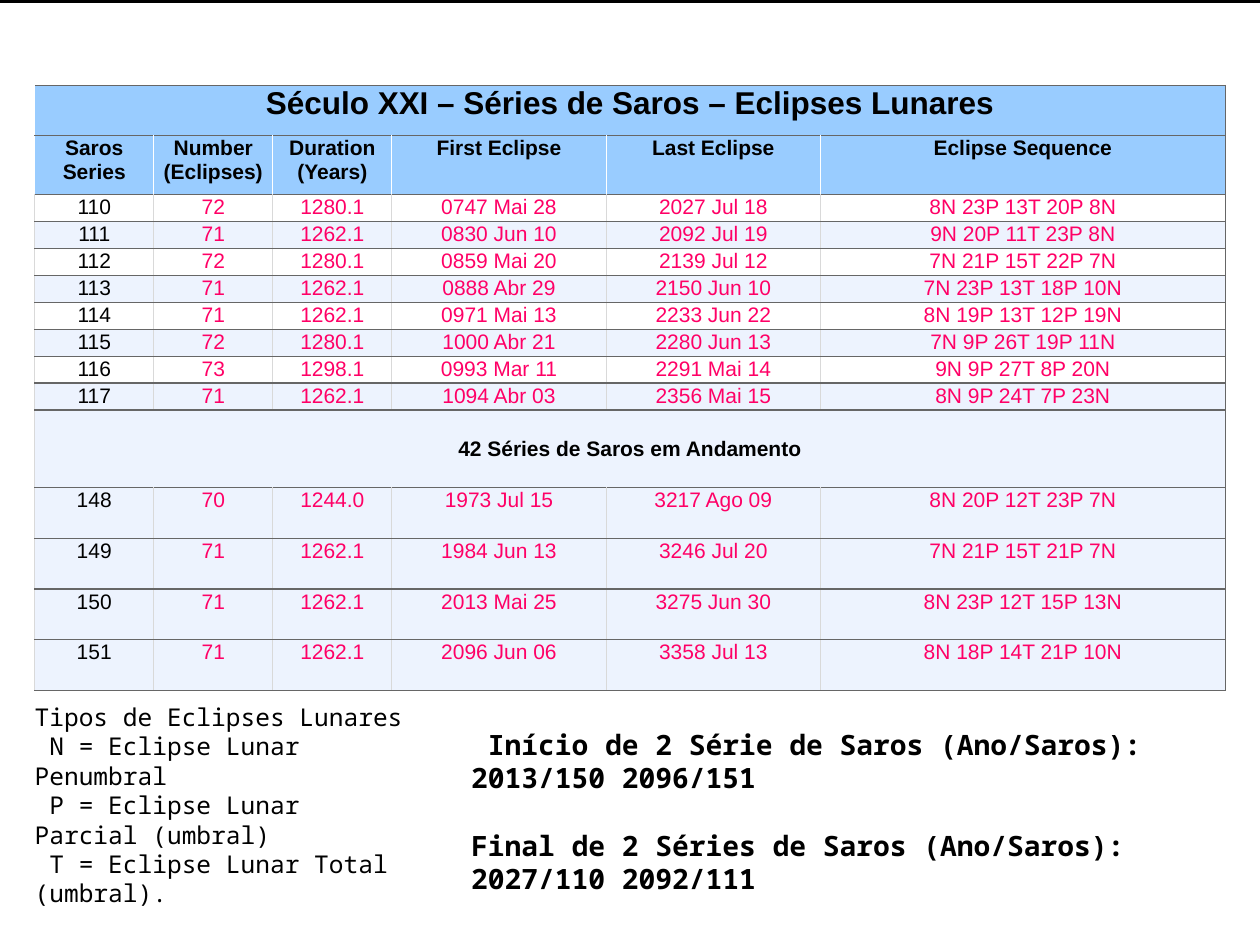
import dataclasses

import lxml.etree
import pptx
import pptx.dml.color
import pptx.enum.shapes
import pptx.enum.text
import pptx.oxml.ns
import pptx.util

Cm = pptx.util.Cm
Pt = pptx.util.Pt


@dataclasses.dataclass(frozen=True)
class Theme:
    table_font: str = "Arial"
    note_font: str = "Noto Sans Mono"
    title_size: float = 18
    table_size: float = 12
    legend_size: float = 14
    summary_size: float = 16
    black: str = "000000"
    white: str = "FFFFFF"
    header_fill: str = "99CCFF"
    band_fill: str = "EDF3FE"
    value: str = "FF0066"
    rule: str = "666666"
    divider: str = "D9D9D9"
    border_width: float = 0.75


TITLE = "Século XXI – Séries de Saros – Eclipses Lunares"
HEADERS = ["Saros Series", "Number (Eclipses)", "Duration (Years)",
           "First Eclipse", "Last Eclipse", "Eclipse Sequence"]
ENDING_SERIES = [
    ["110", "72", "1280.1", "0747 Mai 28", "2027 Jul 18", "8N 23P 13T 20P 8N"],
    ["111", "71", "1262.1", "0830 Jun 10", "2092 Jul 19", "9N 20P 11T 23P 8N"],
    ["112", "72", "1280.1", "0859 Mai 20", "2139 Jul 12", "7N 21P 15T 22P 7N"],
    ["113", "71", "1262.1", "0888 Abr 29", "2150 Jun 10", "7N 23P 13T 18P 10N"],
    ["114", "71", "1262.1", "0971 Mai 13", "2233 Jun 22", "8N 19P 13T 12P 19N"],
    ["115", "72", "1280.1", "1000 Abr 21", "2280 Jun 13", "7N 9P 26T 19P 11N"],
    ["116", "73", "1298.1", "0993 Mar 11", "2291 Mai 14", "9N 9P 27T 8P 20N"],
    ["117", "71", "1262.1", "1094 Abr 03", "2356 Mai 15", "8N 9P 24T 7P 23N"],
]
ONGOING = "42 Séries de Saros em Andamento"
RECENT_SERIES = [
    ["148", "70", "1244.0", "1973 Jul 15", "3217 Ago 09", "8N 20P 12T 23P 7N"],
    ["149", "71", "1262.1", "1984 Jun 13", "3246 Jul 20", "7N 21P 15T 21P 7N"],
    ["150", "71", "1262.1", "2013 Mai 25", "3275 Jun 30", "8N 23P 12T 15P 13N"],
    ["151", "71", "1262.1", "2096 Jun 06", "3358 Jul 13", "8N 18P 14T 21P 10N"],
]
LEGEND = ["Tipos de Eclipses Lunares",
          " N = Eclipse Lunar Penumbral",
          " P = Eclipse Lunar Parcial (umbral)",
          " T = Eclipse Lunar Total (umbral)."]
SUMMARY = [" Início de 2 Série de Saros (Ano/Saros): 2013/150 2096/151",
           "Final de 2 Séries de Saros (Ano/Saros): 2027/110 2092/111"]

COLUMN_WIDTHS = [2.4] * 3 + [4.32] * 2 + [8.16]
ENDING_BLOCK_HEIGHT = 4.35
ending_row_height = ENDING_BLOCK_HEIGHT / len(ENDING_SERIES)
ROW_HEIGHTS = ([1.01, 1.19] + [ending_row_height] * len(ENDING_SERIES) + [1.57]
               + [1.02] * len(RECENT_SERIES))


def rgb(color):
    return pptx.dml.color.RGBColor.from_string(color)


class SarosSlide:
    def __init__(self, presentation, theme):
        self.theme = theme
        self.slide = presentation.slides.add_slide(presentation.slide_layouts[6])

    def format_runs(self, paragraph, font, size, color, bold=False):
        for run in paragraph.runs:
            run.font.name = font
            run.font.size = Pt(size)
            run.font.bold = bold
            run.font.color.rgb = rgb(color)

    def borders(self, cell, left, right):
        """Draw the four cell edges; top and bottom always use the rule colour."""
        properties = cell._tc.get_or_add_tcPr()
        edges = {"a:lnL": left, "a:lnR": right,
                 "a:lnT": self.theme.rule, "a:lnB": self.theme.rule}
        for position, (tag, color) in enumerate(edges.items()):
            line = lxml.etree.Element(pptx.oxml.ns.qn(tag),
                                      w=str(Pt(self.theme.border_width)))
            fill = lxml.etree.SubElement(line, pptx.oxml.ns.qn("a:solidFill"))
            lxml.etree.SubElement(fill, pptx.oxml.ns.qn("a:srgbClr"), val=color)
            properties.insert(position, line)

    def cell(self, cell, text, fill, color, divider, last, size=None, bold=False):
        cell.margin_left = cell.margin_right = Cm(0.1)
        cell.margin_top = cell.margin_bottom = Cm(0.02)
        cell.fill.solid()
        cell.fill.fore_color.rgb = rgb(fill)
        self.borders(cell, divider, self.theme.rule if last else divider)
        cell.text_frame.text = text
        paragraph = cell.text_frame.paragraphs[0]
        paragraph.alignment = pptx.enum.text.PP_ALIGN.CENTER
        self.format_runs(paragraph, self.theme.table_font,
                         size or self.theme.table_size, color, bold)

    def spanning_row(self, table, row, text, fill, divider, size=None):
        last_column = len(table.columns) - 1
        table.cell(row, 0).merge(table.cell(row, last_column))
        for column in range(last_column + 1):
            self.cell(table.cell(row, column), "" if column else text, fill,
                      self.theme.black, divider, True, size, bold=True)

    def series_row(self, table, row, values, fill):
        for column, value in enumerate(values):
            color = self.theme.value if column else self.theme.black
            self.cell(table.cell(row, column), value, fill, color,
                      self.theme.divider, column == len(values) - 1)

    def saros_table(self, left, top):
        theme = self.theme
        table = self.slide.shapes.add_table(
            len(ROW_HEIGHTS), len(COLUMN_WIDTHS), Cm(left), Cm(top),
            Cm(sum(COLUMN_WIDTHS)), Cm(sum(ROW_HEIGHTS))).table
        table.horz_banding = False
        for column, width in zip(table.columns, COLUMN_WIDTHS):
            column.width = Cm(width)
        for row, height in zip(table.rows, ROW_HEIGHTS):
            row.height = Cm(height)

        self.spanning_row(table, 0, TITLE, theme.header_fill, theme.white,
                          theme.title_size)
        for column, header in enumerate(HEADERS):
            self.cell(table.cell(1, column), header, theme.header_fill, theme.black,
                      theme.white, column == len(HEADERS) - 1, bold=True)
        for row, series in enumerate(ENDING_SERIES, start=2):
            self.series_row(table, row, series,
                            theme.band_fill if row % 2 else theme.white)
        ongoing_row = 2 + len(ENDING_SERIES)
        self.spanning_row(table, ongoing_row, ONGOING, theme.band_fill, theme.divider)
        table.cell(ongoing_row, 0).vertical_anchor = pptx.enum.text.MSO_ANCHOR.MIDDLE
        for row, series in enumerate(RECENT_SERIES, start=ongoing_row + 1):
            self.series_row(table, row, series, theme.band_fill)

    def rectangle(self, left, top, width, height, fill):
        shape = self.slide.shapes.add_shape(
            pptx.enum.shapes.MSO_SHAPE.RECTANGLE,
            Cm(left), Cm(top), Cm(width), Cm(height))
        shape.shadow.inherit = False
        shape.fill.solid()
        shape.fill.fore_color.rgb = rgb(fill)
        shape.line.fill.background()
        return shape

    def top_rule(self, width):
        rule = self.rectangle(0, 0, width, 0.05, self.theme.black)
        rule.line.color.rgb = rgb(self.theme.black)
        rule.line.width = Pt(self.theme.border_width)

    def note(self, left, top, width, height, lines, size, bold=False, gap=0):
        """Add a text block whose paragraphs stand gap points apart."""
        frame = self.rectangle(left, top, width, height, self.theme.white).text_frame
        frame.word_wrap = True
        frame.vertical_anchor = pptx.enum.text.MSO_ANCHOR.MIDDLE
        frame.margin_left = frame.margin_top = 0
        frame.margin_right, frame.margin_bottom = Cm(0.2), Cm(0.25)
        frame.text = "\n".join(lines)
        for index, paragraph in enumerate(frame.paragraphs):
            paragraph.alignment = pptx.enum.text.PP_ALIGN.LEFT
            if index and gap:
                paragraph.space_before = Pt(gap)
            self.format_runs(paragraph, self.theme.note_font, size,
                             self.theme.black, bold)


def main():
    presentation = pptx.Presentation()
    presentation.slide_width, presentation.slide_height = Cm(25.4), Cm(19.05)
    theme = Theme()
    saros = SarosSlide(presentation, theme)
    saros.saros_table(0.7, 1.72)
    saros.top_rule(25.4)
    saros.note(0.7, 14.1, 7.9, 4.5, LEGEND, theme.legend_size)
    saros.note(9.5, 14.58, 15.52, 3.8, SUMMARY, theme.summary_size,
               bold=True, gap=19.5)
    presentation.save("out.pptx")


if __name__ == "__main__":
    main()
